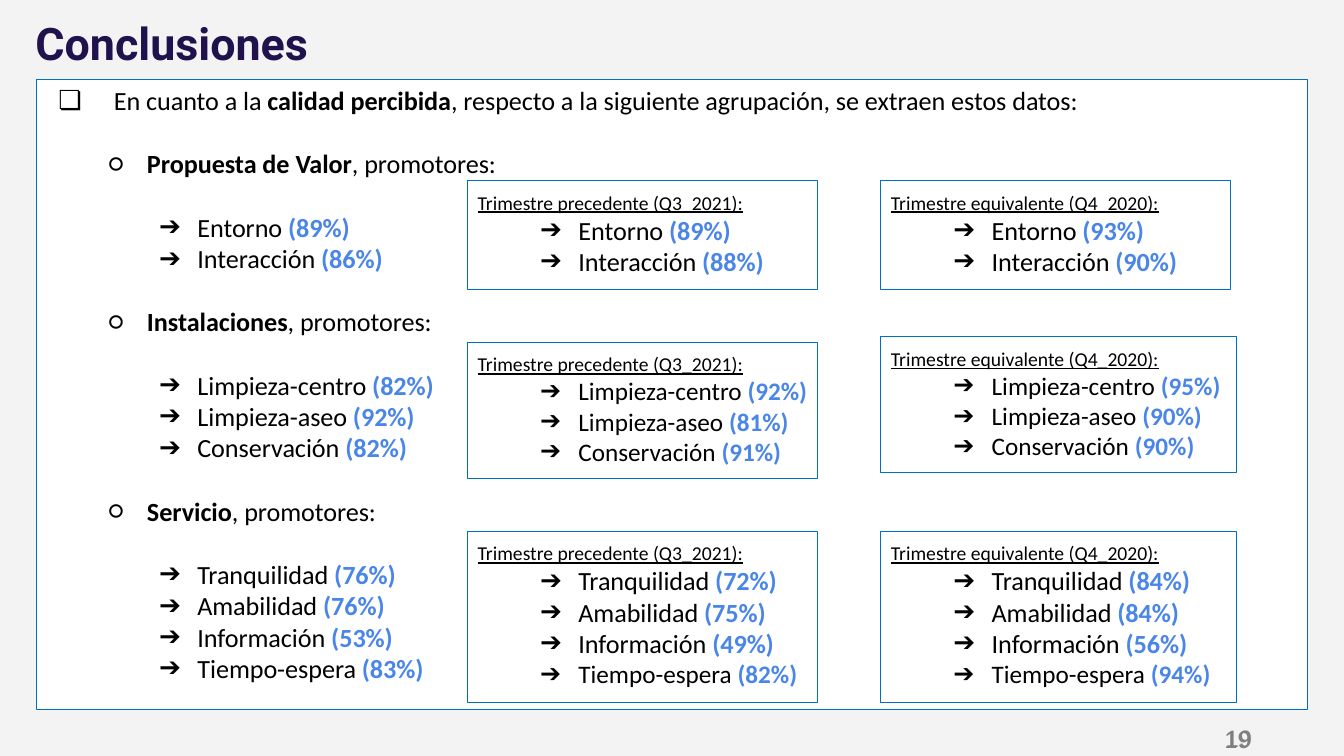
"""Build the conclusions slide on perceived quality, by group and quarter."""
from dataclasses import dataclass

from lxml.etree import SubElement
from pptx import Presentation
from pptx.dml.color import RGBColor
from pptx.enum.shapes import MSO_SHAPE as Preset
from pptx.enum.text import MSO_ANCHOR as Anchor, MSO_AUTO_SIZE as AutoSize, PP_ALIGN as Align
from pptx.oxml.ns import qn
from pptx.util import Pt

BLACK, BLUE, BORDER, WHITE = "000000", "4A86E8", "0070C0", "FFFFFF"
BODY, COMPACT, CAPTION = 18.67, 18, 14
BLANK_LINE = 22.8
HANGING = -27.3


@dataclass(frozen=True)
class Box:
    left: float
    top: float
    width: float
    height: float


@dataclass(frozen=True)
class Span:
    text: str
    size: float = BODY
    color: str = BLACK
    bold: bool = False
    underline: bool = False
    font: str = "Calibri"


@dataclass(frozen=True)
class Line:
    spans: tuple[Span, ...]
    bullet: str = ""
    margin: float = 0
    indent: float = HANGING
    level: int = 0
    before: float = 0
    align: Align = Align.JUSTIFY


@dataclass(frozen=True)
class Metric:
    name: str
    scores: tuple[int, int, int]
    size: float = BODY


@dataclass(frozen=True)
class Group:
    name: str
    metrics: tuple[Metric, ...]
    boxes: tuple[Box, Box]


PREVIOUS_LEFT, EQUIVALENT_LEFT = 334.1, 629.3
NARROW, WIDE = 249.9, 254.2
QUARTERS = ("Trimestre precedente (Q3_2021):", "Trimestre equivalente (Q4_2020):")
GROUPS = (
    Group("Propuesta de Valor",
          (Metric("Entorno", (89, 89, 93)), Metric("Interacción", (86, 88, 90))),
          (Box(PREVIOUS_LEFT, 128.9, NARROW, 77.8), Box(EQUIVALENT_LEFT, 128.9, NARROW, 77.8))),
    Group("Instalaciones",
          (Metric("Limpieza-centro", (82, 92, 95), COMPACT),
           Metric("Limpieza-aseo", (92, 81, 90), COMPACT),
           Metric("Conservación", (82, 91, 90), COMPACT)),
          (Box(PREVIOUS_LEFT, 244.4, NARROW, 97.2), Box(EQUIVALENT_LEFT, 240.5, WIDE, 97.2))),
    Group("Servicio",
          (Metric("Tranquilidad", (76, 72, 84)), Metric("Amabilidad", (76, 75, 84)),
           Metric("Información", (53, 49, 56)),
           Metric("Tiempo-espera", (83, 82, 94), COMPACT)),
          (Box(PREVIOUS_LEFT, 379.4, NARROW, 122.4), Box(EQUIVALENT_LEFT, 379.4, WIDE, 122.4))),
)


def rgb(value: str) -> RGBColor:
    return RGBColor.from_string(value)


def apply(target, values: dict) -> None:
    for name, value in values.items():
        setattr(target, name, value)


def add_bullet(properties, symbol: str) -> None:
    SubElement(SubElement(properties, qn("a:buClr")), qn("a:srgbClr"), val=BLACK)
    SubElement(properties, qn("a:buFont"), typeface="Calibri")
    SubElement(properties, qn("a:buChar"), char=symbol)


def write(frame, lines: list[Line], insets: tuple[float, float], anchor: Anchor) -> None:
    side, edge = (Pt(inset) for inset in insets)
    apply(frame, {"word_wrap": True, "vertical_anchor": anchor, "margin_left": side,
                  "margin_right": side, "margin_top": edge, "margin_bottom": edge})
    for number, line in enumerate(lines):
        paragraph = frame.add_paragraph() if number else frame.paragraphs[0]
        apply(paragraph, {"alignment": line.align, "level": line.level})
        if line.before:
            paragraph.space_before = Pt(line.before)
        if line.bullet:
            properties = paragraph._p.get_or_add_pPr()
            properties.set("marL", str(Pt(line.margin)))
            properties.set("indent", str(Pt(line.indent)))
            add_bullet(properties, line.bullet)
        for span in line.spans:
            run = paragraph.add_run()
            run.text = span.text
            apply(run.font, {"name": span.font, "size": Pt(span.size), "bold": span.bold,
                             "underline": span.underline})
            run.font.color.rgb = rgb(span.color)


def add_label(slide, box: Box, line: Line, insets: tuple[float, float]) -> None:
    label = slide.shapes.add_textbox(Pt(box.left), Pt(box.top), Pt(box.width), Pt(box.height))
    write(label.text_frame, [line], insets, Anchor.MIDDLE)


def add_panel(slide, box: Box, lines: list[Line], edge: float, auto_size: AutoSize) -> None:
    panel = slide.shapes.add_shape(Preset.RECTANGLE, Pt(box.left), Pt(box.top),
                                   Pt(box.width), Pt(box.height))
    panel.shadow.inherit = False
    panel.fill.solid()
    panel.fill.fore_color.rgb = rgb(WHITE)
    panel.line.color.rgb = rgb(BORDER)
    panel.line.width = Pt(0.75)
    write(panel.text_frame, lines, (7.2, edge), Anchor.TOP)
    panel.text_frame.auto_size = auto_size


def metric_line(metric: Metric, quarter: int, margin: float, size: float,
                before: float = 0) -> Line:
    return Line((Span(f"{metric.name} ", size),
                 Span(f"({metric.scores[quarter]}%)", size, BLUE, bold=True)),
                "➔", margin, before=before)


def summary_lines() -> list[Line]:
    lines = [Line((Span("En cuanto a la "), Span("calidad percibida", bold=True),
                   Span(", respecto a la siguiente agrupación, se extraen estos datos:")),
                  "❏", 48.3, -39.6)]
    for group in GROUPS:
        lines.append(Line((Span(group.name, bold=True), Span(", promotores:")),
                          "○", 72, level=1, before=BLANK_LINE))
        lines += [metric_line(metric, 0, 108, BODY, 0 if row else BLANK_LINE)
                  for row, metric in enumerate(group.metrics)]
    return lines


def main() -> None:
    deck = Presentation()
    apply(deck, {"slide_width": Pt(960), "slide_height": Pt(540)})
    slide = deck.slides.add_slide(deck.slide_layouts[6])
    slide.background.fill.solid()
    slide.background.fill.fore_color.rgb = rgb("F3F3F3")

    add_label(slide, Box(25.2, 0, 907.9, 60.5),
              Line((Span("Conclusiones", 32, "20124D", True, font="Roboto"),),
                   align=Align.LEFT), (0, 0))
    add_panel(slide, Box(25.9, 56.9, 907.9, 450), summary_lines(), 3.6, AutoSize.NONE)
    for left, top in ((679, 512.6), (678.2, 513.4)):
        add_label(slide, Box(left, top, 223.9, 28.8),
                  Line((Span("19", 17, "7F7F7F", font="Arial"),), align=Align.RIGHT),
                  (8.6, 4.3))

    for group in GROUPS:
        for quarter, (caption, box) in enumerate(zip(QUARTERS, group.boxes), 1):
            lines = [Line((Span(caption, CAPTION, underline=True),), align=Align.LEFT)]
            lines += [metric_line(metric, quarter, 72, metric.size) for metric in group.metrics]
            add_panel(slide, box, lines, 7.2, AutoSize.SHAPE_TO_FIT_TEXT)

    deck.save("out.pptx")


if __name__ == "__main__":
    main()
